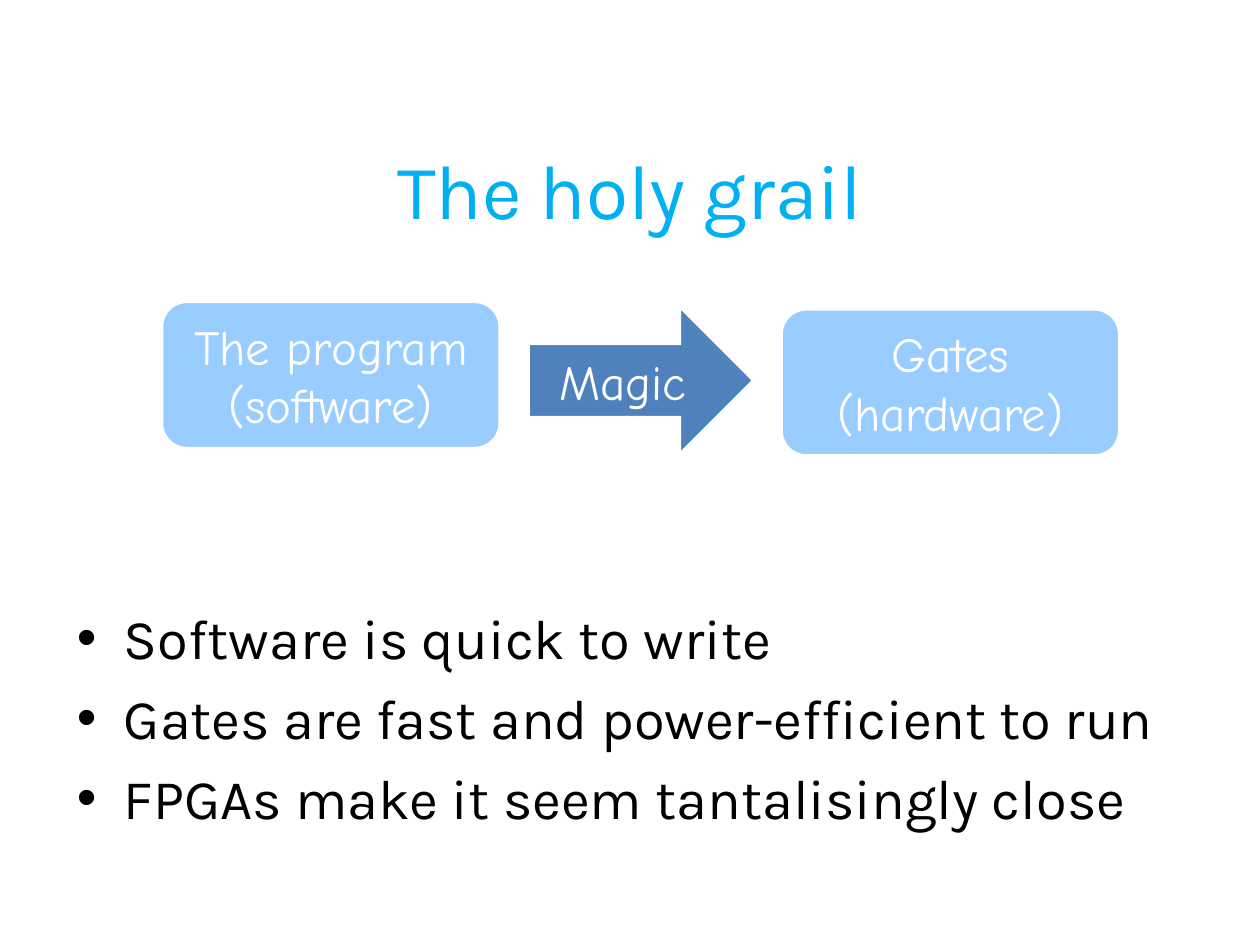
from lxml.etree import SubElement
from pptx import Presentation
from pptx.dml.color import RGBColor
from pptx.enum.shapes import MSO_SHAPE as Preset
from pptx.enum.text import MSO_ANCHOR as Anchor, PP_ALIGN as Align
from pptx.oxml.ns import qn
from pptx.util import Cm, Pt

TITLE = "The holy grail"
POINTS = [
    "Software is quick to write",
    "Gates are fast and power-efficient to run",
    "FPGAs make it seem tantalisingly close",
]
# text, preset, fill, (left, top, width, height) in cm
STEPS = [
    ("The program (software)", Preset.ROUNDED_RECTANGLE, "99CCFF", (3.28, 6.1, 6.78, 2.92)),
    ("Gates (hardware)", Preset.ROUNDED_RECTANGLE, "99CCFF", (15.77, 6.25, 6.78, 2.92)),
    ("Magic", Preset.RIGHT_ARROW, "4F81BD", (10.67, 6.22, 4.5, 2.9)),
]
TITLE_FRAME = (1.27, 2.21, 22.86, 3.18)
POINTS_FRAME = (1.3, 11.91, 22.86, 5.18)
BULLET_INDENT = Cm(0.95)


def color(value):
    return RGBColor.from_string(value)


def add_bullet(para):
    properties = para._p.get_or_add_pPr()
    properties.set("marL", str(BULLET_INDENT))
    properties.set("indent", str(-BULLET_INDENT))
    SubElement(properties, qn("a:buFont")).set("typeface", "Arial")
    SubElement(properties, qn("a:buChar")).set("char", "•")


def write(box, lines, *, font, size, ink, align=Align.CENTER,
          anchor=Anchor.MIDDLE, bullets=False, gap=0):
    frame = box.text_frame
    frame.word_wrap = True
    frame.vertical_anchor = anchor
    for index, line in enumerate(lines):
        para = frame.add_paragraph() if index else frame.paragraphs[0]
        para.alignment = align
        para.space_before = Pt(gap if index else 0)
        if bullets:
            add_bullet(para)
        span = para.add_run()
        span.text = line
        span.font.name = font
        span.font.size = Pt(size)
        span.font.color.rgb = color(ink)


def main():
    deck = Presentation()
    deck.slide_width, deck.slide_height = Cm(25.4), Cm(19.05)
    slide = deck.slides.add_slide(deck.slide_layouts[5])

    title = slide.shapes.title
    title.left, title.top, title.width, title.height = map(Cm, TITLE_FRAME)
    write(title, [TITLE], font="Karla", size=44, ink="00B0F0")

    points = slide.shapes.add_textbox(*map(Cm, POINTS_FRAME))
    points.text_frame.margin_top = Cm(0.25)
    write(points, POINTS, font="Karla", size=32, ink="000000", align=Align.LEFT,
          anchor=Anchor.TOP, bullets=True, gap=7.5)

    for text, preset, fill, frame in STEPS:
        step = slide.shapes.add_shape(preset, *map(Cm, frame))
        step.shadow.inherit = False
        step.fill.solid()
        step.fill.fore_color.rgb = color(fill)
        step.line.color.rgb = color("FFFFFF")
        step.line.width = Pt(0.75)
        write(step, [text], font="Comic Neue", size=28, ink="FFFFFF")

    deck.save("out.pptx")


if __name__ == "__main__":
    main()
